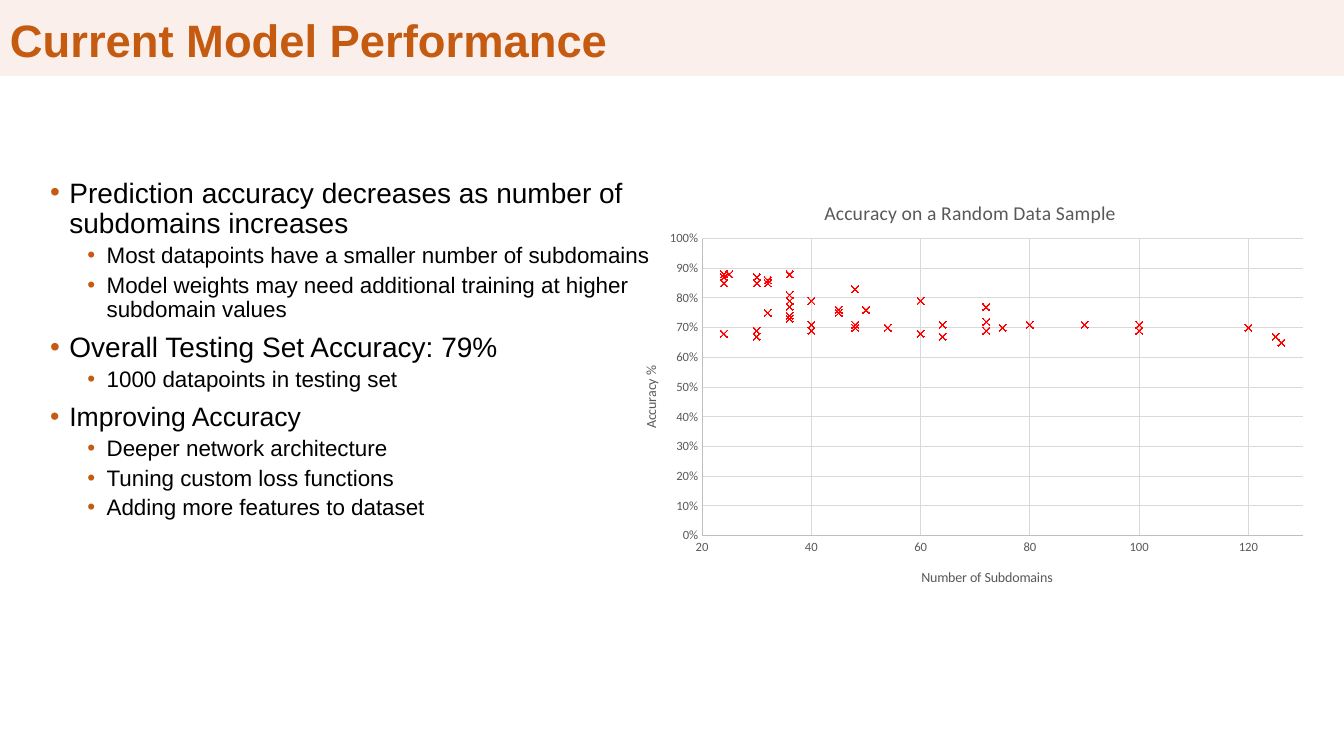
from dataclasses import dataclass

from lxml import etree
from pptx import Presentation
from pptx import util as u
from pptx.chart.data import XyChartData
from pptx.dml.color import RGBColor
from pptx.enum import chart as ch, shapes, text
from pptx.oxml import ns


@dataclass(frozen=True)
class Theme:
    accent: str = "C55A11"
    band: str = "FAEFEA"
    ink: str = "000000"
    muted: str = "595959"
    axis: str = "BFBFBF"
    grid: str = "D9D9D9"
    mark: str = "FF0000"
    font: str = "Arial"
    chart_font: str = "Calibri"
    title: float = 32.4
    sub: float = 16
    chart_title: float = 14
    axis_title: float = 10
    tick: float = 9


T = Theme()
W, H = 13.33, 7.5

# Text, level, size
BULLETS = [
    ("Prediction accuracy decreases as number of subdomains increases", 0, 20),
    ("Most datapoints have a smaller number of subdomains", 1, T.sub),
    ("Model weights may need additional training at higher subdomain values", 1, T.sub),
    ("Overall Testing Set Accuracy: 79%", 0, 20),
    ("1000 datapoints in testing set", 1, T.sub),
    ("Improving Accuracy", 0, 19),
    ("Deeper network architecture", 1, T.sub),
    ("Tuning custom loss functions", 1, T.sub),
    ("Adding more features to dataset", 1, T.sub),
]
SUBDOMAINS = [
    72, 40, 25, 64, 40, 36, 36, 36, 60, 100, 45, 45, 72, 48, 24, 36, 32,
    24, 36, 24, 30, 32, 90, 50, 60, 60, 32, 90, 48, 45, 24, 30, 36, 36,
    24, 80, 30, 72, 100, 40, 75, 54, 24, 48, 120, 30, 64, 125, 60, 126]
ACCURACY = [
    0.77, 0.71, 0.88, 0.71, 0.79, 0.73, 0.88, 0.74, 0.79, 0.71, 0.76, 0.75, 0.72,
    0.71, 0.85, 0.81, 0.75, 0.85, 0.77, 0.88, 0.85, 0.86, 0.71, 0.76, 0.79, 0.79,
    0.85, 0.71, 0.83, 0.76, 0.87, 0.87, 0.79, 0.73, 0.87, 0.71, 0.69, 0.69, 0.69,
    0.69, 0.7, 0.7, 0.68, 0.7, 0.7, 0.67, 0.67, 0.67, 0.68, 0.65]


def rgb(color):
    return RGBColor.from_string(color)


def area(x, y, w, h):
    """Turn shares of the slide into lengths."""
    return [u.Inches(v) for v in (x * W, y * H, w * W, h * H)]


def style(font, size, color, name, bold=False):
    font.size, font.name, font.bold = u.Pt(size), name, bold
    font.color.rgb = rgb(color)


def add_run(p, words, *look):
    r = p.add_run()
    r.text = words
    style(r.font, *look)


def set_line(line, color, width=0.75):
    line.color.rgb = rgb(color)
    line.width = u.Pt(width)


def set_insets(tf, top, bottom):
    tf.word_wrap = True
    tf.margin_left = tf.margin_right = u.Inches(0.1)
    tf.margin_top, tf.margin_bottom = u.Inches(top), u.Inches(bottom)


def add_band(s, x, w, line_width):
    sp = s.shapes.add_shape(shapes.MSO_SHAPE.RECTANGLE, *area(x, 0, w, 0.1))
    sp.shadow.inherit = False
    sp.fill.solid()
    sp.fill.fore_color.rgb = rgb(T.band)
    set_line(sp.line, T.band, line_width)
    return sp


def add_title(sp, words):
    tf = sp.text_frame
    set_insets(tf, 0.1, 0)
    tf.vertical_anchor = text.MSO_ANCHOR.MIDDLE
    p = tf.paragraphs[0]
    p.alignment = text.PP_ALIGN.LEFT
    p.line_spacing = 0.9
    add_run(p, words, T.title, T.accent, T.font, True)


def set_bullet(p, level):
    p.level = level
    pPr = p._p.get_or_add_pPr()
    pPr.set("marL", str(u.Inches(0.19 + 0.37 * level)))
    pPr.set("indent", str(-u.Inches(0.19)))
    color = etree.SubElement(pPr, ns.qn("a:buClr"))
    etree.SubElement(color, ns.qn("a:srgbClr"), val=T.accent)
    etree.SubElement(pPr, ns.qn("a:buFont"), typeface=T.font)
    etree.SubElement(pPr, ns.qn("a:buChar"), char="•")


def add_bullets(s, box, items):
    tf = s.shapes.add_textbox(*box).text_frame
    set_insets(tf, 0.05, 0)
    for i, (words, level, size) in enumerate(items):
        p = tf.add_paragraph() if i else tf.paragraphs[0]
        set_bullet(p, level)
        p.line_spacing = 0.9
        p.space_before = u.Pt((3.8 if level else 7.5) if i else 0)
        add_run(p, words, size, T.ink, T.font)


def place(parent, index, **shares):
    """Fix a chart part at shares of the chart's size."""
    for old in parent.findall(ns.qn("c:layout")):
        parent.remove(old)
    layout = etree.Element(ns.qn("c:layout"))
    manual = etree.SubElement(layout, ns.qn("c:manualLayout"))
    if "w" in shares:
        etree.SubElement(manual, ns.qn("c:layoutTarget"), val="inner")
    for side in "xy":
        etree.SubElement(manual, ns.qn(f"c:{side}Mode"), val="edge")
    for side, share in shares.items():
        etree.SubElement(manual, ns.qn(f"c:{side}"), val=str(share))
    parent.insert(index, layout)


def set_heading(title, words, size, x, y):
    add_run(title.text_frame.paragraphs[0], words, size, T.muted, T.chart_font)
    place(title._element, 1, x=x, y=y)


def set_axis(axis, low, high, unit, number_format, words, x, y):
    axis.minimum_scale, axis.maximum_scale, axis.major_unit = low, high, unit
    axis.major_tick_mark = axis.minor_tick_mark = ch.XL_TICK_MARK.NONE
    axis.has_major_gridlines = True
    set_line(axis.major_gridlines.format.line, T.grid)
    set_line(axis.format.line, T.axis)
    labels = axis.tick_labels
    labels.number_format, labels.number_format_is_linked = number_format, False
    style(labels.font, T.tick, T.muted, T.chart_font)
    set_heading(axis.axis_title, words, T.axis_title, x, y)


def add_scatter(s, box):
    data = XyChartData()
    points = data.add_series("Series 1")
    for count, share in zip(SUBDOMAINS, ACCURACY):
        points.add_data_point(count, share)
    chart = s.shapes.add_chart(ch.XL_CHART_TYPE.XY_SCATTER, *box, data).chart
    style(chart.font, 10, T.ink, T.chart_font)
    chart.has_legend = False
    plot = chart.plots[0]
    plot.vary_by_categories = False
    place(plot._element.getparent(), 0, x=0.12, y=0.15, w=0.86, h=0.69)
    set_heading(chart.chart_title, "Accuracy on a Random Data Sample",
                T.chart_title, 0.29, 0.05)
    set_axis(chart.category_axis, 20, 130, 20, "0", "Number of Subdomains", 0.43, 0.91)
    set_axis(chart.value_axis, 0, 1, 0.1, "0%", "Accuracy %", 0.03, 0.44)

    # Markers only
    series = plot.series[0]
    series.smooth = False
    series.format.line.fill.background()
    series.marker.style, series.marker.size = ch.XL_MARKER_STYLE.X, 5
    series.marker.format.fill.background()
    set_line(series.marker.format.line, T.mark)


def main():
    prs = Presentation()
    prs.slide_width, prs.slide_height = u.Inches(W), u.Inches(H)
    s = prs.slides.add_slide(prs.slide_layouts[6])

    # Header
    add_band(s, 0.82, 0.18, 1)
    add_title(add_band(s, 0, 0.87, 0.75), "Current Model Performance")

    # Findings beside the chart
    add_bullets(s, area(0.03, 0.23, 0.51, 0.64), BULLETS)
    add_scatter(s, area(0.46, 0.23, 0.52, 0.57))

    prs.save("out.pptx")


if __name__ == "__main__":
    main()
